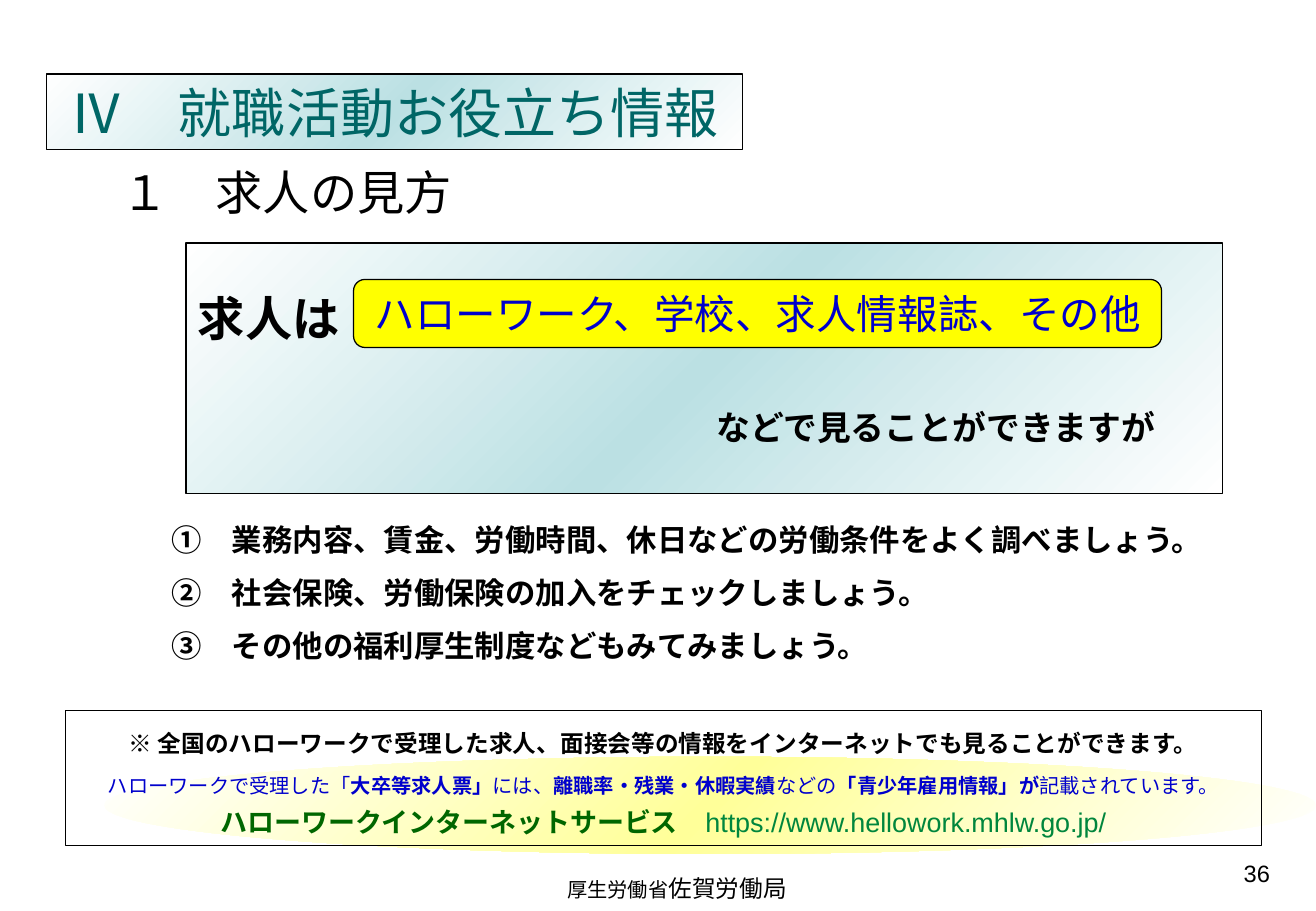
from dataclasses import dataclass

from lxml.etree import SubElement
from pptx import Presentation
from pptx.dml.color import RGBColor
from pptx.enum.shapes import MSO_SHAPE
from pptx.enum.text import MSO_ANCHOR, PP_ALIGN
from pptx.oxml import parse_xml
from pptx.oxml.ns import nsdecls, qn
from pptx.util import Inches, Pt


@dataclass(frozen=True)
class Theme:
    black: str = "000000"
    white: str = "FFFFFF"
    teal: str = "006666"
    pale_teal: str = "BBE0E3"
    yellow: str = "FFFF00"
    pale_yellow: str = "FFFF99"
    blue: str = "0000CC"
    green: str = "006600"
    link_green: str = "00863D"
    gothic: str = "Noto Sans CJK JP"
    sans: str = "Arial"
    serif: str = "TeX Gyre Pagella"
    title: int = 32
    heading: int = 28
    sources: int = 24
    remark: int = 20
    body: int = 18
    service: int = 16
    note: int = 14
    small: int = 12


THEME = Theme()
WIDTH, HEIGHT = Inches(10.83), Inches(7.5)


def area(left, top, width, height):
    """Turn percentages of the slide's size into lengths."""
    shares = (left, top, width, height)
    return [int(share * side / 100) for share, side in zip(shares, (WIDTH, HEIGHT) * 2)]


def fill_gradient(shape, middle):
    """Fill diagonally from white through the middle colour back to white."""
    stops = "".join(
        f'<a:gs pos="{position}"><a:srgbClr val="{color}"/></a:gs>'
        for position, color in ((0, THEME.white), (50000, middle), (100000, THEME.white))
    )
    shape.fill.background()
    properties = shape.fill._xPr
    empty = properties.find(qn("a:noFill"))
    properties.replace(empty, parse_xml(
        f'<a:gradFill {nsdecls("a")} rotWithShape="1"><a:gsLst>{stops}</a:gsLst>'
        '<a:lin ang="2700000" scaled="0"/></a:gradFill>'
    ))


def add_panel(page, place, kind=MSO_SHAPE.RECTANGLE, fill=None, gradient=None, outlined=True):
    shape = page.shapes.add_shape(kind, *area(*place))
    shape.shadow.inherit = False
    if gradient:
        fill_gradient(shape, gradient)
    elif fill:
        shape.fill.solid()
        shape.fill.fore_color.rgb = RGBColor.from_string(fill)
    else:
        shape.fill.background()
    if outlined:
        shape.line.color.rgb = RGBColor.from_string(THEME.black)
        shape.line.width = Pt(0.75)
    else:
        shape.line.fill.background()
    return shape


def add_box(page, place):
    return page.shapes.add_textbox(*area(*place))


def set_frame(box, anchor=MSO_ANCHOR.TOP, wrap=True):
    frame = box.text_frame
    frame.word_wrap = wrap
    frame.vertical_anchor = anchor
    return frame


def add_para(frame, align=PP_ALIGN.LEFT, spacing=None, before=0, indent=0):
    """Use the frame's first paragraph while it is empty, then add new ones."""
    first = frame.paragraphs[0]
    para = frame.add_paragraph() if first.runs else first
    para.alignment = align
    para.line_spacing = spacing
    para.space_before = Pt(before)
    if indent:
        para._p.get_or_add_pPr().set("marL", str(int(indent * WIDTH / 100)))
    return para


def add_span(para, text, size=THEME.body, color=THEME.black, bold=False, font=THEME.gothic):
    span = para.add_run()
    span.text = text
    span.font.size = Pt(size)
    span.font.bold = bold
    span.font.name = font
    span.font.color.rgb = RGBColor.from_string(color)
    SubElement(span._r.get_or_add_rPr(), qn("a:ea")).set("typeface", THEME.gothic)


def add_heading(page):
    frame = set_frame(add_box(page, (8.31, 17.73, 81.35, 6.67)), MSO_ANCHOR.MIDDLE)
    add_span(add_para(frame), "１　求人の見方", size=THEME.heading, font=THEME.sans)


def add_sources(page):
    panel = add_panel(page, (14.13, 26.67, 78.76, 27.47), gradient=THEME.pale_teal)
    frame = set_frame(panel, MSO_ANCHOR.MIDDLE)
    add_span(add_para(frame), "求人は", size=THEME.heading, bold=True)
    add_span(add_para(frame, before=36, indent=39.4), "などで見ることができますが",
             size=THEME.remark, bold=True)

    label = add_panel(page, (26.87, 30.67, 61.4, 7.47), MSO_SHAPE.ROUNDED_RECTANGLE,
                      fill=THEME.yellow)
    frame = set_frame(label, MSO_ANCHOR.MIDDLE, wrap=False)
    add_span(add_para(frame, PP_ALIGN.CENTER), "ハローワーク、学校、求人情報誌、その他",
             size=THEME.sources, color=THEME.blue)


def add_checks(page):
    frame = set_frame(add_box(page, (12.1, 57.33, 83.75, 17.47)))
    checks = (
        "①　業務内容、賃金、労働時間、休日などの労働条件をよく調べましょう。",
        "②　社会保険、労働保険の加入をチェックしましょう。",
        "③　その他の福利厚生制度などもみてみましょう。",
    )
    for number, check in enumerate(checks):
        add_span(add_para(frame, spacing=0.8, before=14 if number else 0), check, bold=True)


def add_notes_panel(page):
    frame = set_frame(add_panel(page, (4.99, 78, 90.86, 14.8)))
    centred = {"align": PP_ALIGN.CENTER, "spacing": Pt(24)}
    add_span(add_para(frame, **centred),
             "※ 全国のハローワークで受理した求人、面接会等の情報をインターネットでも見ることができます。",
             size=THEME.note, bold=True)

    para = add_para(frame, **centred)
    pieces = ("ハローワークで受理した「", "大卒等求人票」", "には、", "離職率・残業・休暇実績",
              "などの", "「青少年雇用情報」が", "記載されています。")
    for number, piece in enumerate(pieces):
        add_span(para, piece, size=THEME.small, color=THEME.blue, bold=number % 2 == 1)

    para = add_para(frame, **centred)
    add_span(para, "ハローワークインターネットサービス　", size=THEME.service,
             color=THEME.green, bold=True)
    add_span(para, "https://www.hellowork.mhlw.go.jp/", size=THEME.service,
             color=THEME.link_green, font=THEME.sans)


def add_footer(page):
    para = add_para(set_frame(add_box(page, (42.2, 95.33, 22.53, 4.4))))
    add_span(para, "厚生労働省", size=THEME.small, font=THEME.sans)
    add_span(para, "佐賀労働局", size=THEME.note, font=THEME.sans)

    number = set_frame(add_box(page, (74.05, 93.6, 23.36, 6.4)))
    add_span(add_para(number, PP_ALIGN.RIGHT), "36", size=THEME.note, font=THEME.sans)


def add_title(page):
    panel = add_panel(page, (3.51, 8.13, 52.91, 8.27), gradient=THEME.pale_teal)
    frame = set_frame(panel, MSO_ANCHOR.MIDDLE, wrap=False)
    add_span(add_para(frame, PP_ALIGN.CENTER), "Ⅳ　就職活動お役立ち情報",
             size=THEME.title, color=THEME.teal, font=THEME.serif)


def main():
    deck = Presentation()
    deck.slide_width, deck.slide_height = WIDTH, HEIGHT
    page = deck.slides.add_slide(deck.slide_layouts[6])
    add_panel(page, (7.94, 83.07, 92.06, 10.67), MSO_SHAPE.OVAL,
              gradient=THEME.pale_yellow, outlined=False)
    add_heading(page)
    add_sources(page)
    add_checks(page)
    add_notes_panel(page)
    add_footer(page)
    add_title(page)
    deck.save("out.pptx")


if __name__ == "__main__":
    main()
